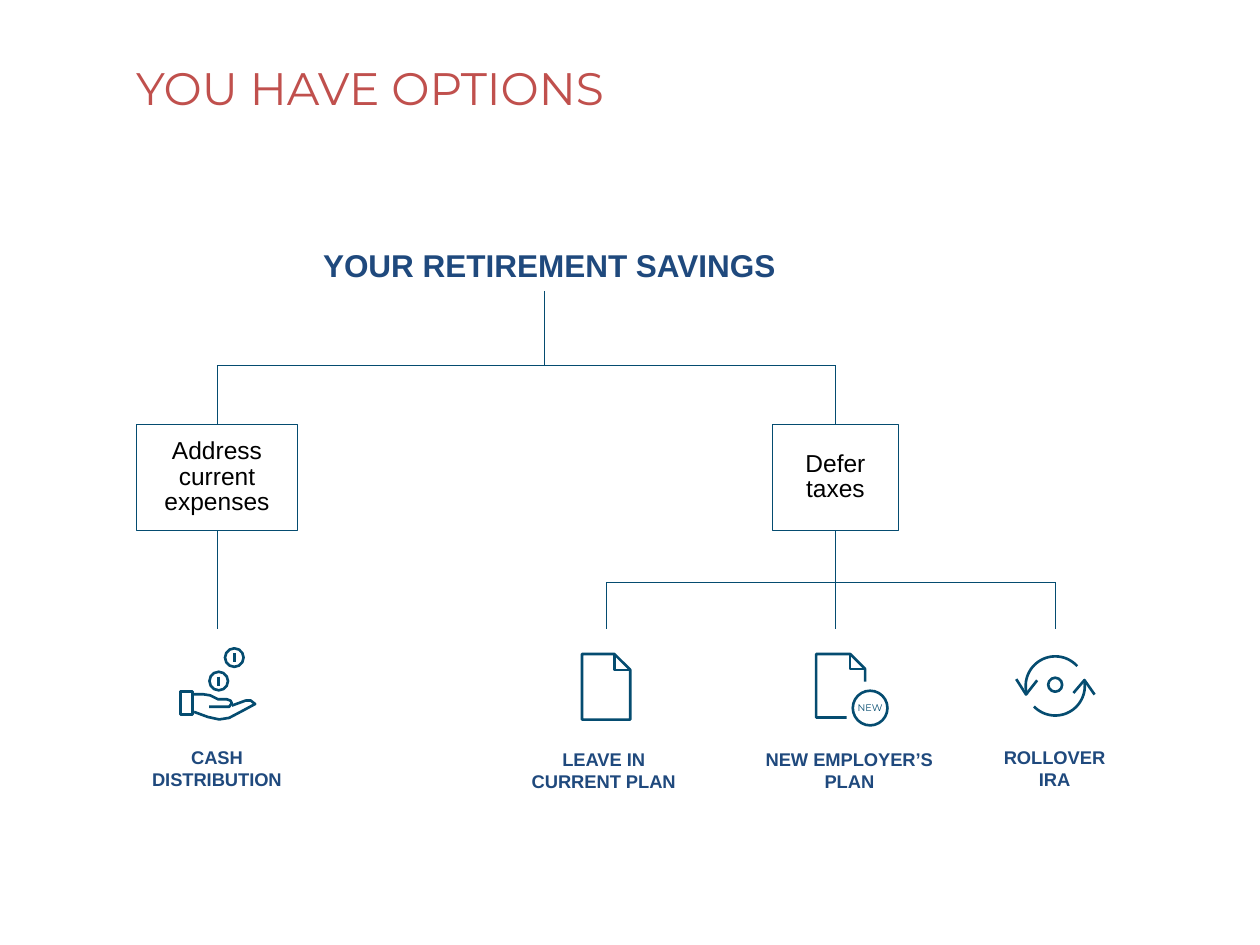
from dataclasses import dataclass
from math import cos, radians, sin

from lxml.etree import SubElement
from pptx import Presentation
from pptx.dml.color import RGBColor
from pptx.enum.shapes import MSO_CONNECTOR, MSO_SHAPE
from pptx.enum.text import MSO_ANCHOR, MSO_AUTO_SIZE, PP_ALIGN
from pptx.oxml.ns import qn
from pptx.util import Pt


@dataclass(frozen=True)
class Theme:
    title_color: RGBColor = RGBColor(0xC0, 0x50, 0x4D)
    heading_color: RGBColor = RGBColor(0x1F, 0x49, 0x7D)
    line_color: RGBColor = RGBColor(0x05, 0x4C, 0x70)
    text_color: RGBColor = RGBColor(0, 0, 0)
    white: RGBColor = RGBColor(0xFF, 0xFF, 0xFF)
    title_font: str = "Montserrat"
    body_font: str = "Arial"
    title_size: float = 26
    heading_size: float = 18
    box_size: float = 14
    label_size: float = 10.5
    badge_size: float = 5.5
    tree_line: float = 0.5
    icon_line: float = 1.5


class SlideBuilder:
    def __init__(self, slide, theme):
        self.slide = slide
        self.theme = theme

    def set_text(self, shape, text, size, color, font=None, bold=False,
                 align=PP_ALIGN.CENTER, spacing=1.0, anchor=MSO_ANCHOR.MIDDLE, margins=(0, 0)):
        """Fill a shape with one paragraph; a newline becomes a line break."""
        frame = shape.text_frame
        frame.word_wrap = True
        frame.auto_size = MSO_AUTO_SIZE.NONE
        frame.vertical_anchor = anchor
        frame.margin_left = frame.margin_right = Pt(margins[0])
        frame.margin_top = frame.margin_bottom = Pt(margins[1])
        paragraph = frame.paragraphs[0]
        paragraph.alignment = align
        paragraph.line_spacing = spacing
        paragraph.space_before = Pt(0)
        for index, line in enumerate(text.split("\n")):
            if index:
                paragraph.add_line_break()
            run = paragraph.add_run()
            run.text = line
            run.font.name = font or self.theme.body_font
            run.font.size = Pt(size)
            run.font.bold = bold
            run.font.color.rgb = color
        return paragraph

    def place(self, shape, left, top, width, height):
        shape.left, shape.top = Pt(left), Pt(top)
        shape.width, shape.height = Pt(width), Pt(height)

    def title(self, text, *bounds):
        shape = self.slide.shapes.title
        self.place(shape, *bounds)
        self.set_text(shape, text, self.theme.title_size, self.theme.title_color,
                      self.theme.title_font, align=PP_ALIGN.LEFT, spacing=0.85)

    def heading(self, text, *bounds):
        shape = self.slide.placeholders[1]
        self.place(shape, *bounds)
        paragraph = self.set_text(shape, text, self.theme.heading_size, self.theme.heading_color,
                                  bold=True, spacing=1.05, anchor=MSO_ANCHOR.TOP)
        properties = paragraph._p.get_or_add_pPr()
        properties.set("marL", "0")
        properties.set("indent", "0")
        SubElement(properties, qn("a:buNone"))

    def shape(self, kind, left, top, width, height, fill=None, line_width=None):
        shape = self.slide.shapes.add_shape(kind, Pt(left), Pt(top), Pt(width), Pt(height))
        self.style(shape, fill, line_width)
        return shape

    def style(self, shape, fill, line_width):
        shape.shadow.inherit = False
        if fill is None:
            shape.fill.background()
        else:
            shape.fill.solid()
            shape.fill.fore_color.rgb = fill
        if line_width is None:
            shape.line.fill.background()
        else:
            shape.line.color.rgb = self.theme.line_color
            shape.line.width = Pt(line_width)

    def box(self, text, *bounds):
        shape = self.shape(MSO_SHAPE.RECTANGLE, *bounds, self.theme.white, self.theme.tree_line)
        self.set_text(shape, text, self.theme.box_size, self.theme.text_color,
                      spacing=0.85, margins=(7.2, 3.6))
        return shape

    def label(self, text, center, top, width):
        shape = self.shape(MSO_SHAPE.RECTANGLE, center - width / 2, top, width, 37.4,
                           self.theme.white)
        self.set_text(shape, text, self.theme.label_size, self.theme.heading_color, bold=True)

    def line(self, start, end, width=None, begin=None, finish=None):
        """Draw a line; begin and finish are (shape, site) pairs to join it to."""
        connector = self.slide.shapes.add_connector(
            MSO_CONNECTOR.STRAIGHT, *(Pt(value) for value in (*start, *end)))
        connector.line.color.rgb = self.theme.line_color
        connector.line.width = Pt(width or self.theme.tree_line)
        SubElement(connector._element.spPr, qn("a:effectLst"))
        if begin:
            connector.begin_connect(*begin)
        if finish:
            connector.end_connect(*finish)

    def stroke(self, points, close=False):
        first, *rest = [(Pt(x), Pt(y)) for x, y in points]
        builder = self.slide.shapes.build_freeform(*first)
        builder.add_line_segments(rest, close=close)
        self.style(builder.convert_to_shape(), None, self.theme.icon_line)

    def arc(self, x, y, radius, start, end, steps=30):
        angles = [radians(start + (end - start) * step / steps) for step in range(steps + 1)]
        self.stroke([(x + radius * cos(angle), y + radius * sin(angle)) for angle in angles])

    def ring(self, x, y, radius):
        return self.shape(MSO_SHAPE.OVAL, x - radius, y - radius, 2 * radius, 2 * radius,
                          line_width=self.theme.icon_line)

    def cash_icon(self):
        for x, y in [(133.9, 375.8), (125, 389.2)]:
            self.ring(x, y, 5.3)
            self.line((x, y - 2.6), (x, y + 2.6), self.theme.icon_line)
        self.shape(MSO_SHAPE.RECTANGLE, 103, 395.2, 7.2, 13.1, line_width=self.theme.icon_line)
        self.stroke([(110.9, 396.7), (115.9, 396.7), (120.2, 397.4), (124.6, 399.6),
                     (129.6, 399.6), (131.8, 400.4), (132.5, 401.8), (131, 403.9),
                     (119.5, 403.9)])
        self.stroke([(132.5, 403.2), (140.4, 400.3), (143.3, 400.3), (145.8, 402.3),
                     (138.2, 406.4), (131, 410.2), (125.3, 411.1), (118.8, 409.7),
                     (110.9, 406.8)])

    def page_icon(self, left, right, fold, bottom, badge=False):
        top = 373.7
        corner = [(left, top), (right - fold, top), (right, top + fold)]
        if badge:
            self.stroke([(483.8, bottom), (left, bottom), *corner, (right, 389.5)])
        else:
            self.stroke([*corner, (right, bottom), (left, bottom)], close=True)
        self.stroke([(right - fold, top), (right - fold, top + fold), (right, top + fold)])
        if badge:
            ring = self.ring(497.2, 404.6, 9.9)
            self.set_text(ring, "NEW", self.theme.badge_size, self.theme.line_color,
                          self.theme.title_font)
            ring.text_frame.word_wrap = False

    def rollover_icon(self):
        x, y = 603, 392
        self.ring(x, y - 0.7, 4)
        self.arc(x, y, 16.9, 163, 318)
        self.arc(x, y, 16.9, 136, -11)
        self.stroke([(580.7, 388.1), (586.3, 396.9), (592.7, 388.8)])
        self.stroke([(613.4, 396), (619.7, 388.6), (625.5, 396.9)])


def main():
    presentation = Presentation()
    presentation.slide_width, presentation.slide_height = Pt(720), Pt(540)
    slide = presentation.slides.add_slide(presentation.slide_layouts[1])
    builder = SlideBuilder(slide, Theme())

    builder.title("YOU HAVE OPTIONS", 77.8, 23, 588.2, 58.3)
    builder.heading("YOUR RETIREMENT SAVINGS", 24.5, 139.7, 578.9, 32.4)

    for text, center, top, width in [
        ("CASH DISTRIBUTION", 124, 420.5, 92.2),
        ("LEAVE IN CURRENT PLAN", 345, 421.2, 92.2),
        ("NEW EMPLOYER’S PLAN", 485.4, 421.2, 100),
        ("ROLLOVER\nIRA", 602.6, 420.5, 92.2),
    ]:
        builder.label(text, center, top, width)

    box_top, box_height = 242.6, 60.6
    box_bottom = box_top + box_height
    expenses_x, taxes_x = 124, 477.4
    expenses = builder.box("Address current expenses",
                           expenses_x - 46.1, box_top, 92.2, box_height)
    taxes = builder.box("Defer taxes", taxes_x - 36, box_top, 72, box_height)

    upper_bus, lower_bus, branch_end = 208.8, 333, 359.3
    root_x, leave_x, rollover_x = 311, 346.3, 603.2
    builder.line((root_x, 166.3), (root_x, upper_bus))
    builder.line((expenses_x, upper_bus), (taxes_x, upper_bus))
    for box, x in [(expenses, expenses_x), (taxes, taxes_x)]:
        builder.line((x, upper_bus), (x, box_top), finish=(box, 0))
        builder.line((x, box_bottom), (x, branch_end), begin=(box, 2))
    builder.line((leave_x, lower_bus), (rollover_x, lower_bus))
    for x in (leave_x, rollover_x):
        builder.line((x, lower_bus), (x, branch_end))

    builder.cash_icon()
    builder.page_icon(332.6, 360.2, 9.1, 411.2)
    builder.page_icon(466.4, 494.4, 8.6, 410, badge=True)
    builder.rollover_icon()
    presentation.save("out.pptx")


if __name__ == "__main__":
    main()
